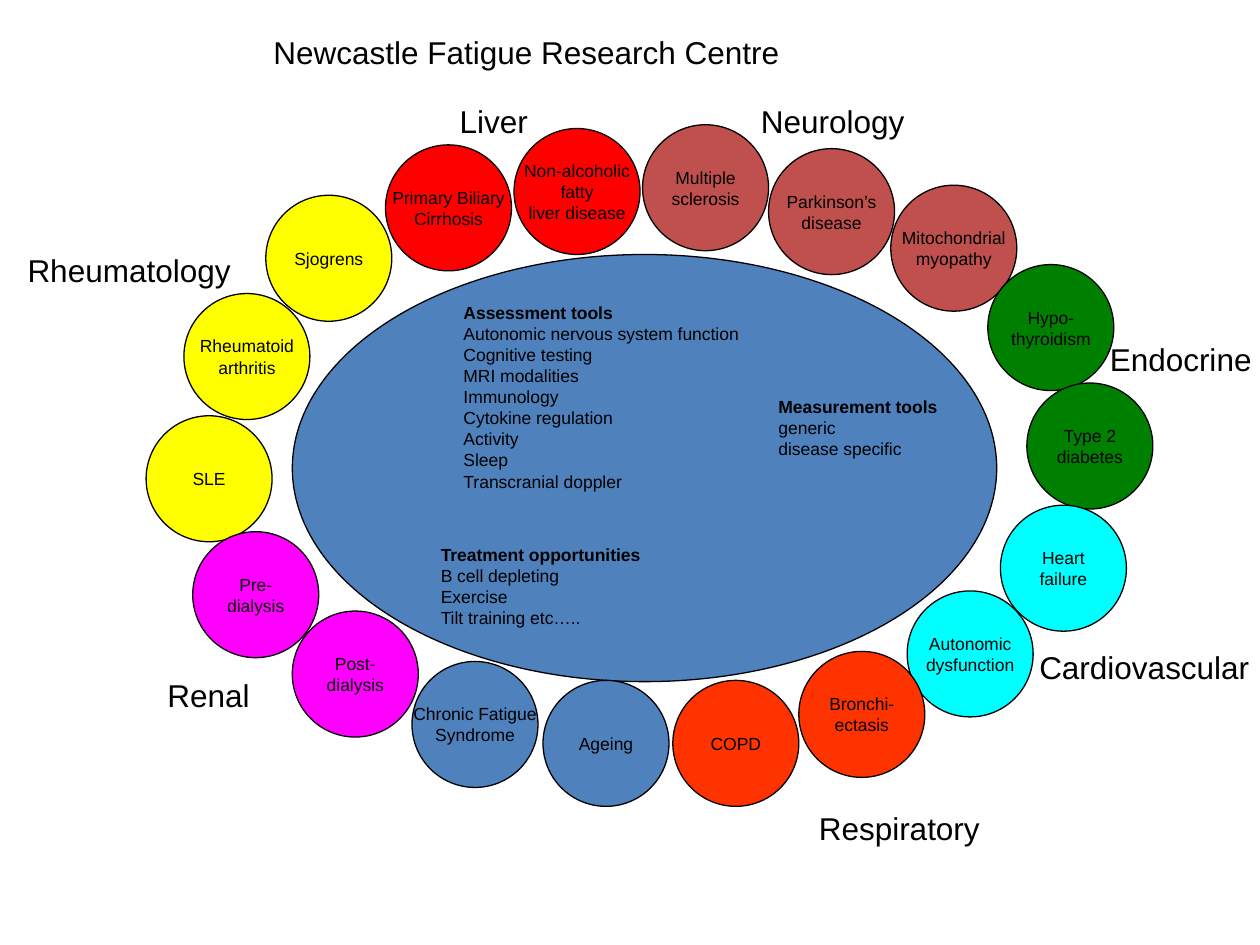
from pptx import Presentation
from pptx.dml.color import RGBColor
from pptx.enum.shapes import MSO_SHAPE
from pptx.enum.text import MSO_ANCHOR, MSO_AUTO_SIZE, PP_ALIGN
from pptx.util import Emu, Pt

EMU_PER_PX = 9144  # 100 px to the inch
OVAL = MSO_SHAPE.OVAL
TOP, MIDDLE = MSO_ANCHOR.TOP, MSO_ANCHOR.MIDDLE
LEFT, CENTER = PP_ALIGN.LEFT, PP_ALIGN.CENTER
TITLE_ONLY = 5
FONT = "Arial"
LABEL_SIZE, BODY_SIZE = 18, 10
LABEL_HEIGHT, CIRCLE_SIZE = 40, 100

BLACK = RGBColor(0x00, 0x00, 0x00)
WHITE = RGBColor(0xFF, 0xFF, 0xFF)
BLUE = RGBColor(0x4F, 0x81, 0xBD)
RED = RGBColor(0xFF, 0x00, 0x00)
BRICK = RGBColor(0xC0, 0x50, 0x4D)
GREEN = RGBColor(0x00, 0x80, 0x00)
YELLOW = RGBColor(0xFF, 0xFF, 0x00)
MAGENTA = RGBColor(0xFF, 0x00, 0xFF)
CYAN = RGBColor(0x00, 0xFF, 0xFF)
ORANGE = RGBColor(0xFF, 0x33, 0x00)

TITLE_BOX = (207, 21, 433, 40)
HUB_BOX = (232, 202, 559, 339)
RING_BOX = (116, 99, 799, 541)

# Box within the hub, wrapping, heading, items
TOOLS = [
    ((126, 33, 331, 176), True, "Assessment tools",
     ["Autonomic nervous system function", "Cognitive testing",
      "MRI modalities", "Immunology", "Cytokine regulation", "Activity",
      "Sleep", "Transcranial doppler"]),
    ((376, 107, 146, 77), False, "Measurement tools",
     ["generic", "disease specific"]),
    ((108, 225, 180, 77), False, "Treatment opportunities",
     ["B cell depleting", "Exercise", "Tilt training etc….."]),
]

# Specialty, its label's left, top and width, colour, and its conditions;
# all places are within the ring
SPECIALTIES = [
    ("Liver", (239, -23, 74), RED,
     [(190, 16, ["Primary Biliary", "Cirrhosis"]),
      (292, 3, ["Non-alcoholic", "fatty", "liver disease"])]),
    ("Neurology", (478, -23, 134), BRICK,
     [(394, 0, ["Multiple", "sclerosis"]),
      (494, 19, ["Parkinson’s", "disease"]),
      (591, 48, ["Mitochondrial", "myopathy"])]),
    ("Endocrine", (755, 166, 133), GREEN,
     [(668, 111, ["Hypo-", "thyroidism"]),
      (699, 205, ["Type 2", "diabetes"])]),
    ("Rheumatology", (-104, 95, 181), YELLOW,
     [(95, 56, ["Sjogrens"]),
      (30, 134, ["Rheumatoid", "arthritis"]),
      (0, 231, ["SLE"])]),
    ("Renal", (7, 433, 85), MAGENTA,
     [(37, 323, ["Pre-", "dialysis"]),
      (116, 386, ["Post-", "dialysis"])]),
    ("Cardiovascular", (699, 410, 187), CYAN,
     [(678, 302, ["Heart", "failure"]),
      (604, 370, ["Autonomic", "dysfunction"])]),
    ("Respiratory", (524, 538, 155), ORANGE,
     [(518, 418, ["Bronchi-", "ectasis"]),
      (418, 441, ["COPD"])]),
    (None, None, BLUE,
     [(211, 426, ["Chronic Fatigue", "Syndrome"]),
      (315, 441, ["Ageing"])]),
]


def px(length):
    return Emu(length * EMU_PER_PX)


def emu_box(box):
    return [px(length) for length in box]


def write_lines(frame, lines, size, align=LEFT, anchor=TOP, wrap=False,
                bold_first=False):
    frame.word_wrap = wrap
    frame.vertical_anchor = anchor
    for index, line in enumerate(lines):
        paragraph = frame.paragraphs[0] if index == 0 else frame.add_paragraph()
        paragraph.alignment = align
        run = paragraph.add_run()
        run.text = line
        run.font.name = FONT
        run.font.size = Pt(size)
        run.font.bold = bold_first and index == 0
        run.font.color.rgb = BLACK


def add_text(slide, box, lines, size, **layout):
    frame = slide.shapes.add_textbox(*emu_box(box)).text_frame
    write_lines(frame, lines, size, **layout)
    frame.auto_size = MSO_AUTO_SIZE.SHAPE_TO_FIT_TEXT


def add_oval(slide, box, colour):
    oval = slide.shapes.add_shape(OVAL, *emu_box(box))
    oval.shadow.inherit = False
    oval.fill.solid()
    oval.fill.fore_color.rgb = colour
    oval.line.color.rgb = BLACK
    oval.line.width = Pt(0.75)
    return oval


def add_title(slide, box):
    title = slide.shapes.title
    title.left, title.top, title.width, title.height = emu_box(box)
    write_lines(title.text_frame, ["Newcastle Fatigue Research Centre"],
                LABEL_SIZE, wrap=True)
    title.text_frame.auto_size = MSO_AUTO_SIZE.NONE


def add_hub(slide, box):
    """Draw the central ellipse with the shared tools and treatments."""
    left, top = box[:2]
    add_oval(slide, box, BLUE)
    for (x, y, width, height), wrap, heading, items in TOOLS:
        add_text(slide, (left + x, top + y, width, height),
                 [heading, *items], BODY_SIZE, wrap=wrap, bold_first=True)


def add_ring(slide, box):
    """Draw the condition circles and specialty labels around the hub."""
    left, top = box[:2]
    for specialty, label_place, colour, conditions in SPECIALTIES:
        if specialty:
            x, y, width = label_place
            add_text(slide, (left + x, top + y, width, LABEL_HEIGHT),
                     [specialty], LABEL_SIZE)
        for x, y, lines in conditions:
            circle = add_oval(
                slide, (left + x, top + y, CIRCLE_SIZE, CIRCLE_SIZE), colour)
            write_lines(circle.text_frame, lines, BODY_SIZE,
                        align=CENTER, anchor=MIDDLE)


def main():
    deck = Presentation()
    deck.slide_width, deck.slide_height = px(1000), px(750)
    slide = deck.slides.add_slide(deck.slide_layouts[TITLE_ONLY])
    slide.background.fill.solid()
    slide.background.fill.fore_color.rgb = WHITE
    add_title(slide, TITLE_BOX)
    add_hub(slide, HUB_BOX)
    add_ring(slide, RING_BOX)
    deck.save("out.pptx")


if __name__ == "__main__":
    main()
